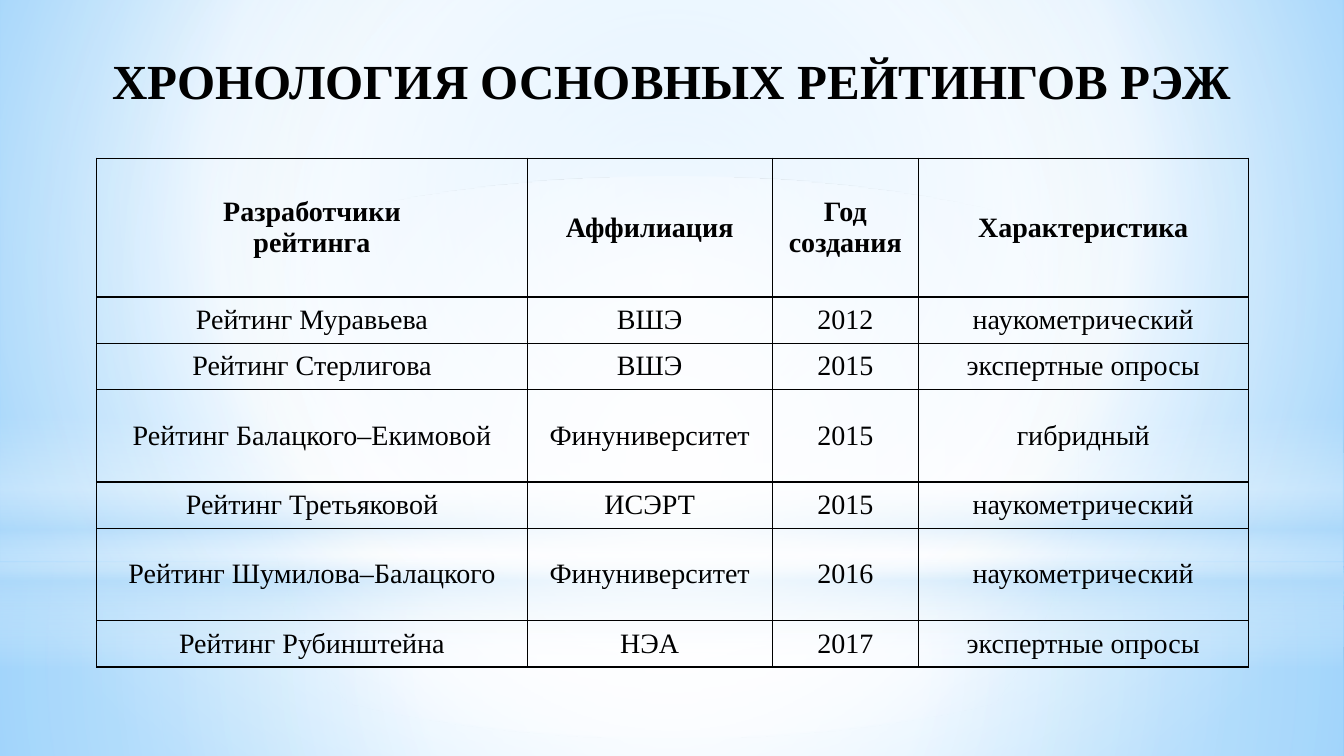
from dataclasses import dataclass
from typing import Optional

from lxml.etree import SubElement
from pptx import Presentation
from pptx.dml.color import RGBColor
from pptx.enum.shapes import MSO_SHAPE as Shape
from pptx.enum.text import MSO_ANCHOR as Anchor, MSO_AUTO_SIZE as AutoSize, PP_ALIGN as Align
from pptx.oxml.ns import qn
from pptx.util import Emu, Inches, Pt

WIDTH, HEIGHT = Inches(13.33), Inches(7.5)
FONT = "Times New Roman"
BLACK, WHITE, PALE_BLUE = "000000", "FFFFFF", "B4DCFA"
CENTRE = (50, 50, 50, 50)


@dataclass(frozen=True)
class Stop:
    position: int
    colour: str
    opacity: int = 100


@dataclass(frozen=True)
class Gradient:
    stops: tuple[Stop, ...]
    focus: Optional[tuple[int, ...]] = None  # left, top, right, bottom; None is top to bottom


@dataclass(frozen=True)
class Glow:
    outline: Shape
    top: float  # percent of the slide height
    height: float
    gradient: Gradient


@dataclass(frozen=True)
class Rating:
    developer: str
    affiliation: str
    year: str
    kind: str
    units: int = 1  # height in table row units


SKY = Gradient((Stop(0, "9ED5FF"), Stop(60, WHITE), Stop(100, "5BB9FF")), (20, 10, 20, 60))
GLOWS = (
    Glow(Shape.RECTANGLE, 74.4, 25.6, Gradient(
        (Stop(0, WHITE, 91), Stop(37, WHITE, 76), Stop(100, PALE_BLUE, 79)), CENTRE)),
    Glow(Shape.RECTANGLE, 0, 74.4, Gradient(
        (Stop(0, WHITE, 89), Stop(48, WHITE, 62), Stop(100, PALE_BLUE, 79)), CENTRE)),
    Glow(Shape.RECTANGLE, 54.93, 33.33, Gradient(
        (Stop(0, WHITE, 0), Stop(29, WHITE, 30), Stop(45, PALE_BLUE, 40),
         Stop(55, WHITE, 26), Stop(65, PALE_BLUE, 60), Stop(100, WHITE, 0)))),
    Glow(Shape.OVAL, 23.33, 74.4, Gradient((Stop(0, WHITE), Stop(56, WHITE, 0)), CENTRE)),
)

HEADER = Rating("Разработчики\nрейтинга", "Аффилиация", "Год\nсоздания", "Характеристика", 3)
RATINGS = (
    Rating("Рейтинг Муравьева", "ВШЭ", "2012", "наукометрический"),
    Rating("Рейтинг Стерлигова", "ВШЭ", "2015", "экспертные опросы"),
    Rating("Рейтинг Балацкого–Екимовой", "Финуниверситет", "2015", "гибридный", 2),
    Rating("Рейтинг Третьяковой", "ИСЭРТ", "2015", "наукометрический"),
    Rating("Рейтинг Шумилова–Балацкого", "Финуниверситет", "2016", "наукометрический", 2),
    Rating("Рейтинг Рубинштейна", "НЭА", "2017", "экспертные опросы"),
)
COLUMN_SHARES = (32.03, 18.23, 10.88, 24.53)  # percent of the slide width
ROW_UNIT = 6.12  # percent of the slide height


def across(percent: float) -> Emu:
    return Emu(round(WIDTH * percent / 100))


def down(percent: float) -> Emu:
    return Emu(round(HEIGHT * percent / 100))


def rgb(colour: str) -> RGBColor:
    return RGBColor.from_string(colour)


def apply_gradient(fill, owner, gradient: Gradient) -> None:
    fill.gradient()
    grad_fill = owner.xpath(".//a:gradFill")[0]
    grad_fill.clear()
    stops = SubElement(grad_fill, qn("a:gsLst"))
    for stop in gradient.stops:
        gs = SubElement(stops, qn("a:gs"), pos=str(stop.position * 1000))
        colour = SubElement(gs, qn("a:srgbClr"), val=stop.colour)
        if stop.opacity < 100:
            SubElement(colour, qn("a:alpha"), val=str(stop.opacity * 1000))
    if gradient.focus is None:
        SubElement(grad_fill, qn("a:lin"), ang="5400000", scaled="0")
    else:
        circle = SubElement(grad_fill, qn("a:path"), path="circle")
        sides = {side: str(share * 1000) for side, share in zip("ltrb", gradient.focus)}
        SubElement(circle, qn("a:fillToRect"), **sides)


def draw_glow(slide, glow: Glow) -> None:
    light = slide.shapes.add_shape(glow.outline, 0, down(glow.top), WIDTH, down(glow.height))
    light.shadow.inherit = False
    light.line.fill.background()
    apply_gradient(light.fill, light.element, glow.gradient)


def style_text(frame, size: int, bold: bool) -> None:
    for paragraph in frame.paragraphs:
        paragraph.alignment = Align.CENTER
        font = paragraph.font
        font.name, font.size, font.bold = FONT, Pt(size), bold
        font.color.rgb = rgb(BLACK)


def draw_borders(cell) -> None:
    properties = cell._tc.get_or_add_tcPr()
    for side in ("lnL", "lnR", "lnT", "lnB"):
        border = SubElement(properties, qn(f"a:{side}"), w=str(Pt(1)))
        SubElement(SubElement(border, qn("a:solidFill")), qn("a:srgbClr"), val=BLACK)


def fill_cell(cell, text: str, bold: bool) -> None:
    cell.text = text
    cell.vertical_anchor = Anchor.MIDDLE
    cell.margin_left = cell.margin_right = Inches(0.07)
    cell.margin_top = cell.margin_bottom = 0
    style_text(cell.text_frame, 20, bold)
    draw_borders(cell)
    cell.fill.background()


def draw_ratings(slide) -> None:
    lines = (HEADER, *RATINGS)
    table = slide.shapes.add_table(
        len(lines), len(COLUMN_SHARES), across(7.2), down(20.93), across(sum(COLUMN_SHARES)),
        down(ROW_UNIT * sum(line.units for line in lines))).table
    table.first_row = table.horz_banding = False
    for column, share in zip(table.columns, COLUMN_SHARES):
        column.width = across(share)
    for row, line in zip(table.rows, lines):
        row.height = down(ROW_UNIT * line.units)
        texts = (line.developer, line.affiliation, line.year, line.kind)
        for cell, text in zip(row.cells, texts):
            fill_cell(cell, text, line is HEADER)


def draw_title(slide) -> None:
    title = slide.shapes.title
    title.left, title.top, title.width, title.height = 0, down(0.8), WIDTH, down(15.6)
    frame = title.text_frame
    frame.text = "ХРОНОЛОГИЯ ОСНОВНЫХ РЕЙТИНГОВ РЭЖ"
    frame.word_wrap, frame.auto_size = True, AutoSize.NONE
    frame.vertical_anchor = Anchor.MIDDLE
    frame.paragraphs[0].line_spacing = 1.5
    style_text(frame, 35, True)
    # Bring the title in front of the glows
    slide.shapes.element.append(title.element)


def main() -> None:
    deck = Presentation()
    deck.slide_width, deck.slide_height = WIDTH, HEIGHT
    slide = deck.slides.add_slide(deck.slide_layouts[5])

    # Backdrop
    apply_gradient(slide.background.fill, slide.element, SKY)
    for glow in GLOWS:
        draw_glow(slide, glow)

    # Content
    draw_title(slide)
    draw_ratings(slide)
    deck.save("out.pptx")


if __name__ == "__main__":
    main()
